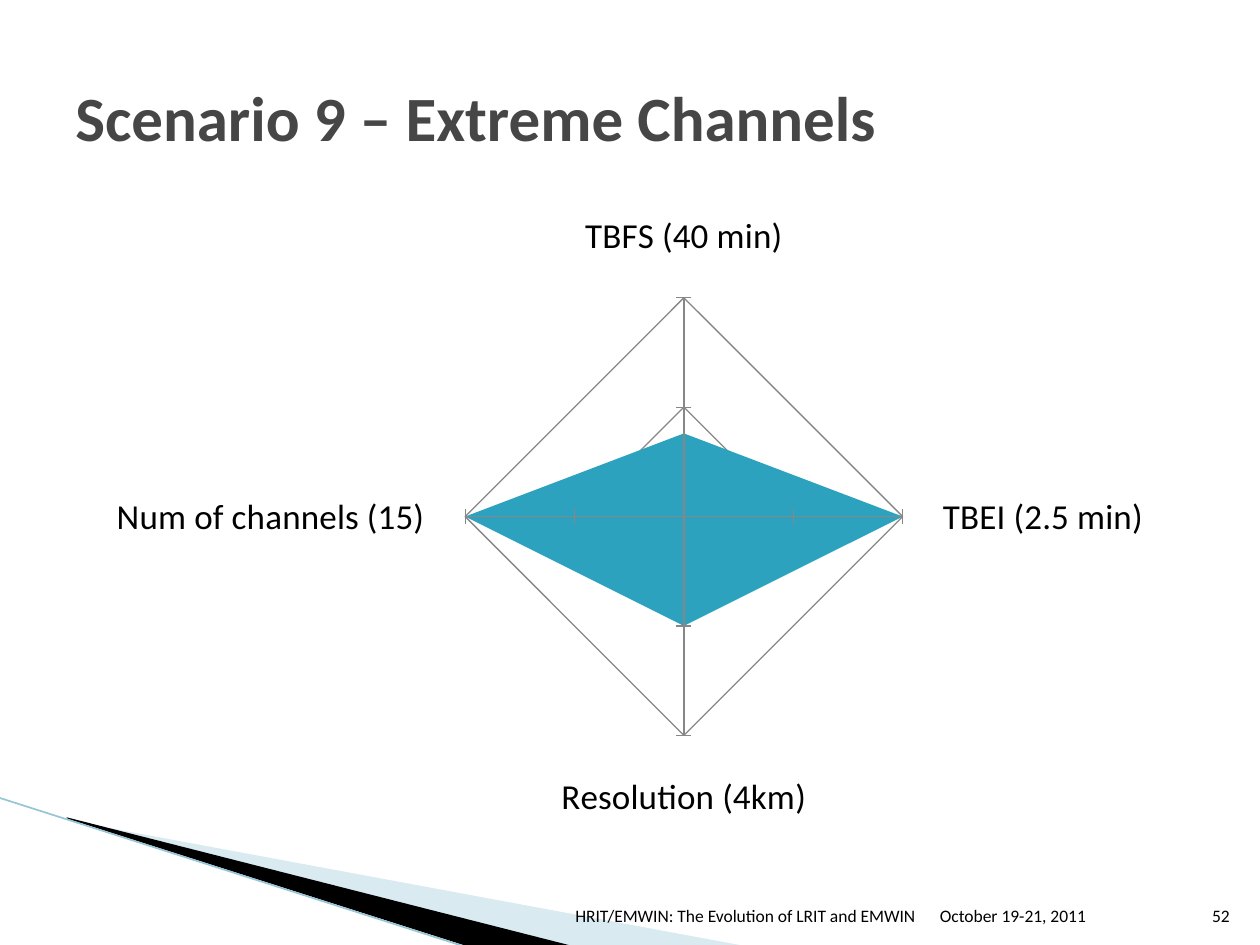
from dataclasses import dataclass

from lxml import etree
from pptx import Presentation
from pptx import util as u
from pptx.chart import data as chart_data
from pptx.dml import color
from pptx.enum import chart as chart_enum, shapes, text
from pptx.oxml import ns


@dataclass(frozen=True)
class Theme:
    font: str = "Calibri"
    title_size: int = 36
    label_size: int = 20
    footer_size: int = 10
    title: str = "464646"
    ink: str = "000000"
    accent: str = "2DA2BF"
    pale: str = "A0CBDC"
    edge: str = "97C5D8"
    grid: str = "878787"


THEME = Theme()


def rgb(value):
    return color.RGBColor.from_string(value)


def set_font(font, size, ink, bold=False):
    font.name = THEME.font
    font.size = u.Pt(size)
    font.color.rgb = rgb(ink)
    font.bold = bold


def add_label(slide, words, box, size, ink=THEME.ink, bold=False,
              align=text.PP_ALIGN.LEFT, anchor=text.MSO_ANCHOR.BOTTOM):
    frame = slide.shapes.add_textbox(*map(u.Pt, box)).text_frame
    frame.word_wrap = True
    frame.vertical_anchor = anchor
    paragraph = frame.paragraphs[0]
    paragraph.text = words
    paragraph.alignment = align
    set_font(paragraph.font, size, ink, bold)


def add_wedge(slide, points, fill, opacity=100):
    builder = slide.shapes.build_freeform(*points[0], scale=u.Pt(1))
    builder.add_line_segments(points[1:], close=True)
    wedge = builder.convert_to_shape()
    wedge.shadow.inherit = False
    wedge.line.fill.background()
    wedge.fill.solid()
    wedge.fill.fore_color.rgb = rgb(fill)
    if opacity < 100:
        tint = wedge.fill._xPr.find(".//" + ns.qn("a:srgbClr"))
        etree.SubElement(tint, ns.qn("a:alpha"), val=str(opacity * 1000))


def add_edge(slide, start, end):
    edge = slide.shapes.add_connector(
        shapes.MSO_CONNECTOR.STRAIGHT, *map(u.Pt, start + end))
    edge.line.color.rgb = rgb(THEME.edge)
    edge.line.width = u.Pt(0.95)
    etree.SubElement(edge._element.spPr, ns.qn("a:effectLst"))


def add_radar(slide, box, scores):
    scenario = chart_data.CategoryChartData()
    scenario.categories = list(scores)
    scenario.add_series("Series 1", list(scores.values()))
    radar = slide.shapes.add_chart(
        chart_enum.XL_CHART_TYPE.RADAR_FILLED, *map(u.Pt, box), scenario).chart
    radar.has_legend = False
    radar.has_title = False
    set_font(radar.font, THEME.footer_size, THEME.ink)

    plot = radar.plots[0]
    plot.vary_by_categories = False
    area = plot.series[0].format
    area.fill.solid()
    area.fill.fore_color.rgb = rgb(THEME.accent)
    area.line.fill.background()

    # Axes: category names around the rim, rings without numbers
    criteria, rings = radar.category_axis, radar.value_axis
    for axis in (criteria, rings):
        axis.has_major_gridlines = True
        axis.major_tick_mark = chart_enum.XL_TICK_MARK.CROSS
        for line in (axis.format.line, axis.major_gridlines.format.line):
            line.color.rgb = rgb(THEME.grid)
            line.width = u.Pt(0.75)
    set_font(criteria.tick_labels.font, THEME.label_size, THEME.ink)
    rings.minimum_scale, rings.maximum_scale, rings.major_unit = 0, 100, 50
    rings.tick_label_position = chart_enum.XL_TICK_LABEL_POSITION.NONE


def main():
    deck = Presentation()
    deck.slide_width, deck.slide_height = u.Pt(720), u.Pt(540)
    slide = deck.slides.add_slide(deck.slide_layouts[6])

    # Corner decoration
    add_wedge(slide, [(39.6, 468.7), (428.4, 540.7), (328.3, 540.7), (39.6, 468)],
              THEME.pale, opacity=40)
    add_wedge(slide, [(38.2, 467.3), (329, 540.7), (267.8, 541.4), (38.9, 468)],
              THEME.ink)
    add_edge(slide, (-0.7, 455.8), (267.1, 541.4))

    # Scenario scores
    add_radar(slide, (36, 115.2, 648, 360), {
        "TBFS (40 min)": 38,
        "TBEI (2.5 min)": 100,
        "Resolution (4km)": 50,
        "Num of channels (15)": 100,
    })

    # Footer
    right = text.PP_ALIGN.RIGHT
    for words, left, width, align in (
            ("October 19-21, 2011", 530, 151, text.PP_ALIGN.LEFT),
            ("HRIT/EMWIN: The Evolution of LRIT and EMWIN", 288, 242, right),
            ("52", 681, 28.8, right)):
        add_label(slide, words, (left, 504, width, 28.8),
                  THEME.footer_size, align=align)

    # Title
    add_label(slide, "Scenario 9 – Extreme Channels", (36, 21.6, 594, 90),
              THEME.title_size, THEME.title, bold=True,
              anchor=text.MSO_ANCHOR.MIDDLE)

    deck.save("out.pptx")


if __name__ == "__main__":
    main()
